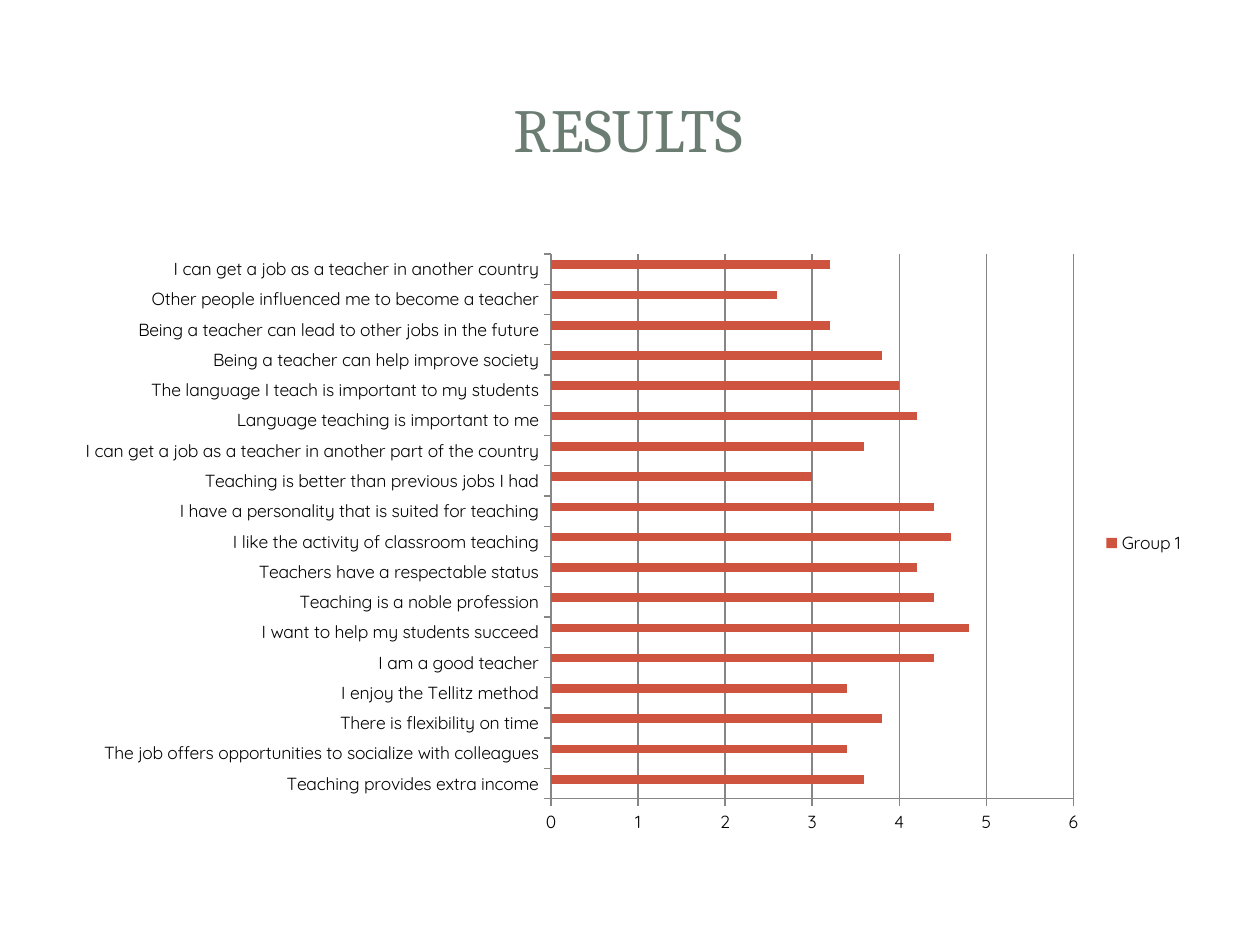
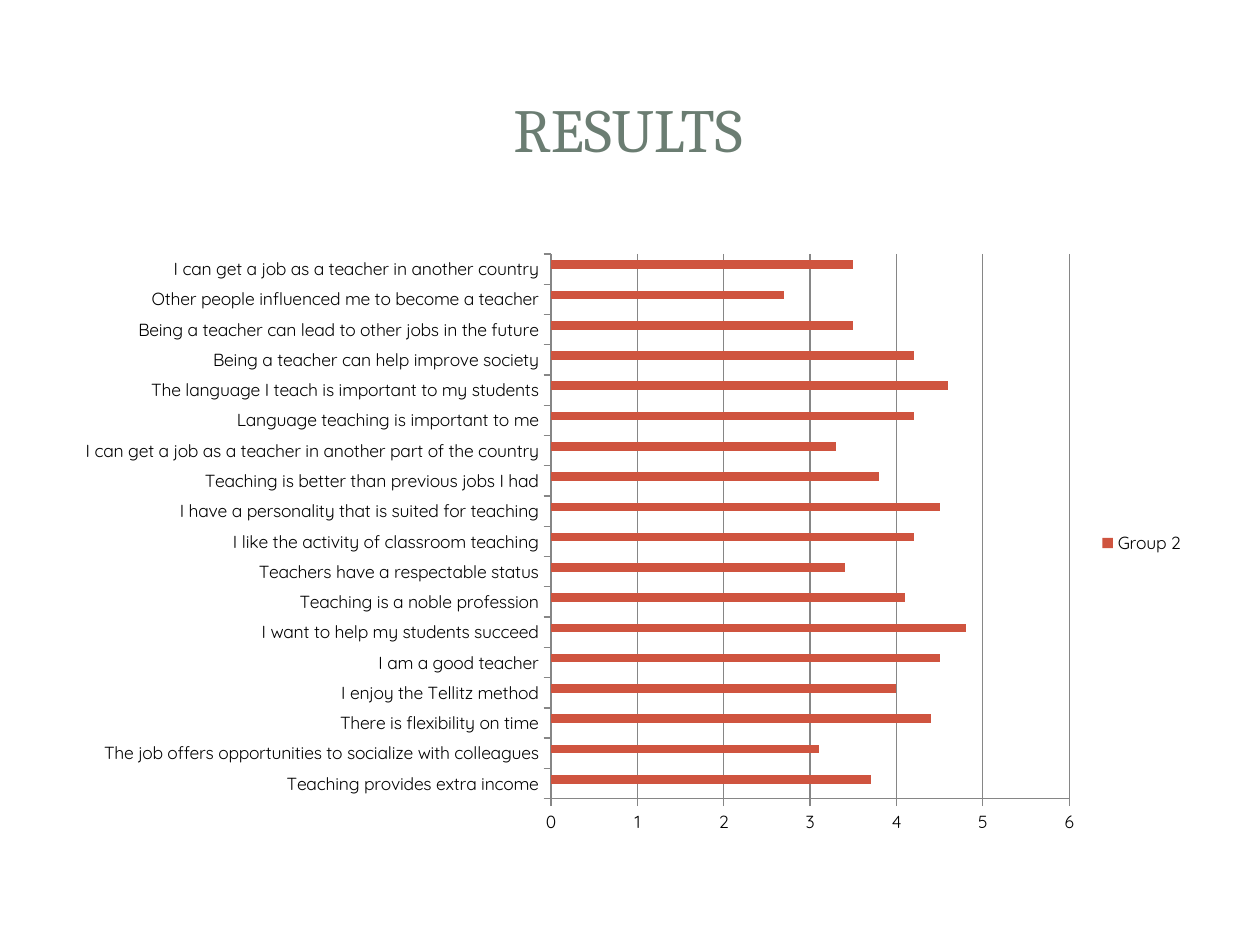
from lxml import etree
from pptx import Presentation
from pptx.chart.data import CategoryChartData
from pptx.dml.color import RGBColor
from pptx.enum.chart import XL_CHART_TYPE, XL_LEGEND_POSITION, XL_TICK_MARK
from pptx.enum.shapes import MSO_SHAPE
from pptx.enum.text import MSO_ANCHOR, PP_ALIGN
from pptx.util import Pt

BAR = XL_CHART_TYPE.BAR_CLUSTERED
RIGHT = XL_LEGEND_POSITION.RIGHT
TICK_OUT, TICK_NONE = XL_TICK_MARK.OUTSIDE, XL_TICK_MARK.NONE
RECT = MSO_SHAPE.RECTANGLE
CENTER, MIDDLE = PP_ALIGN.CENTER, MSO_ANCHOR.MIDDLE

# Shared style
TITLE_FONT, BODY_FONT = "Cambria", "Quicksand"
SAGE, GREEN, RED = "6B7D72", "93A299", "CF543F"
WHITE, BLACK, GRAY = "FFFFFF", "000000", "868686"
TITLE_BANDS = [(21.6, 21.6, 676.8, 104.4), (29.52, 29.52, 660.24, 87.84)]
TITLE_BOX = (33.84, 32.4, 650.16, 82.08)
CHART_BOX = (36, 138.24, 648, 344.16)

# Survey statements, from the bottom bar to the top bar
STATEMENTS = [
    "Teaching provides extra income",
    "The job offers opportunities to socialize with colleagues",
    "There is flexibility on time",
    "I enjoy the Tellitz method",
    "I am a good teacher",
    "I want to help my students succeed",
    "Teaching is a noble profession",
    "Teachers have a respectable status",
    "I like the activity of classroom teaching",
    "I have a personality that is suited for teaching",
    "Teaching is better than previous jobs I had",
    "I can get a job as a teacher in another part of the country",
    "Language teaching is important to me",
    "The language I teach is important to my students",
    "Being a teacher can help improve society",
    "Being a teacher can lead to other jobs in the future",
    "Other people influenced me to become a teacher",
    "I can get a job as a teacher in another country",
]
GROUP_SCORES = {
    "Group 1": [3.6, 3.4, 3.8, 3.4, 4.4, 4.8, 4.4, 4.2, 4.6,
                4.4, 3, 3.6, 4.2, 4, 3.8, 3.2, 2.6, 3.2],
    "Group 2": [3.7, 3.1, 4.4, 4, 4.5, 4.8, 4.1, 3.4, 4.2,
                4.5, 3.8, 3.3, 4.2, 4.6, 4.2, 3.5, 2.7, 3.5],
}


def rgb(color):
    return RGBColor.from_string(color)


def paint(fill, color):
    fill.solid()
    fill.fore_color.rgb = rgb(color)


def add_band(slide, box):
    sp = slide.shapes.add_shape(RECT, *map(Pt, box))
    sp.shadow.inherit = False
    paint(sp.fill, WHITE)
    sp.line.fill.background()


def add_text(slide, text, box, *, size, font, color, align=CENTER, anchor=MIDDLE):
    tf = slide.shapes.add_textbox(*map(Pt, box)).text_frame
    tf.word_wrap = True
    tf.vertical_anchor = anchor
    p = tf.paragraphs[0]
    p.alignment = align
    r = p.add_run()
    r.text = text
    r.font.size, r.font.name = Pt(size), font
    r.font.color.rgb = rgb(color)


def add_title(slide, text):
    for box in TITLE_BANDS:
        add_band(slide, box)
    add_text(slide, text, TITLE_BOX, size=35, font=TITLE_FONT, color=SAGE)


def style_line(line):
    line.color.rgb = rgb(GRAY)
    line.width = Pt(0.75)


def hide_legend_entry(legend, index):
    """Leave one entry out of the legend."""
    pos = legend._element.find("{*}legendPos")
    ns = etree.QName(pos).namespace
    entry = etree.Element(f"{{{ns}}}legendEntry")
    etree.SubElement(entry, f"{{{ns}}}idx", val=str(index))
    etree.SubElement(entry, f"{{{ns}}}delete", val="1")
    pos.addnext(entry)


def add_score_chart(slide, group, scores):
    # An empty first series keeps the bars in the upper half of each row
    data = CategoryChartData()
    data.categories = STATEMENTS
    data.add_series("", [None] * len(STATEMENTS))
    data.add_series(group, scores)
    chart = slide.shapes.add_chart(BAR, *map(Pt, CHART_BOX), data).chart
    chart.has_title = False
    chart.font.size, chart.font.name = Pt(10), BODY_FONT
    chart.font.color.rgb = rgb(BLACK)

    # Bars
    plot = chart.plots[0]
    plot.gap_width, plot.overlap = 150, 0
    plot.vary_by_categories = False
    for series, color in zip(plot.series, (GREEN, RED)):
        paint(series.format.fill, color)

    # Axes and grid
    for axis in (chart.category_axis, chart.value_axis):
        axis.major_tick_mark, axis.minor_tick_mark = TICK_OUT, TICK_NONE
        style_line(axis.format.line)
    values = chart.value_axis
    values.minimum_scale, values.maximum_scale, values.major_unit = 0, 6, 1
    values.has_major_gridlines = True
    style_line(values.major_gridlines.format.line)

    # Legend: a bar chart lists its entries in reverse, so 1 is the empty series
    chart.has_legend = True
    chart.legend.position = RIGHT
    chart.legend.include_in_layout = False
    hide_legend_entry(chart.legend, 1)


def main():
    prs = Presentation()
    prs.slide_width, prs.slide_height = Pt(720), Pt(540)
    for group, scores in GROUP_SCORES.items():
        slide = prs.slides.add_slide(prs.slide_layouts[6])
        add_title(slide, "RESULTS")
        add_score_chart(slide, group, scores)
    prs.save("out.pptx")


if __name__ == "__main__":
    main()
